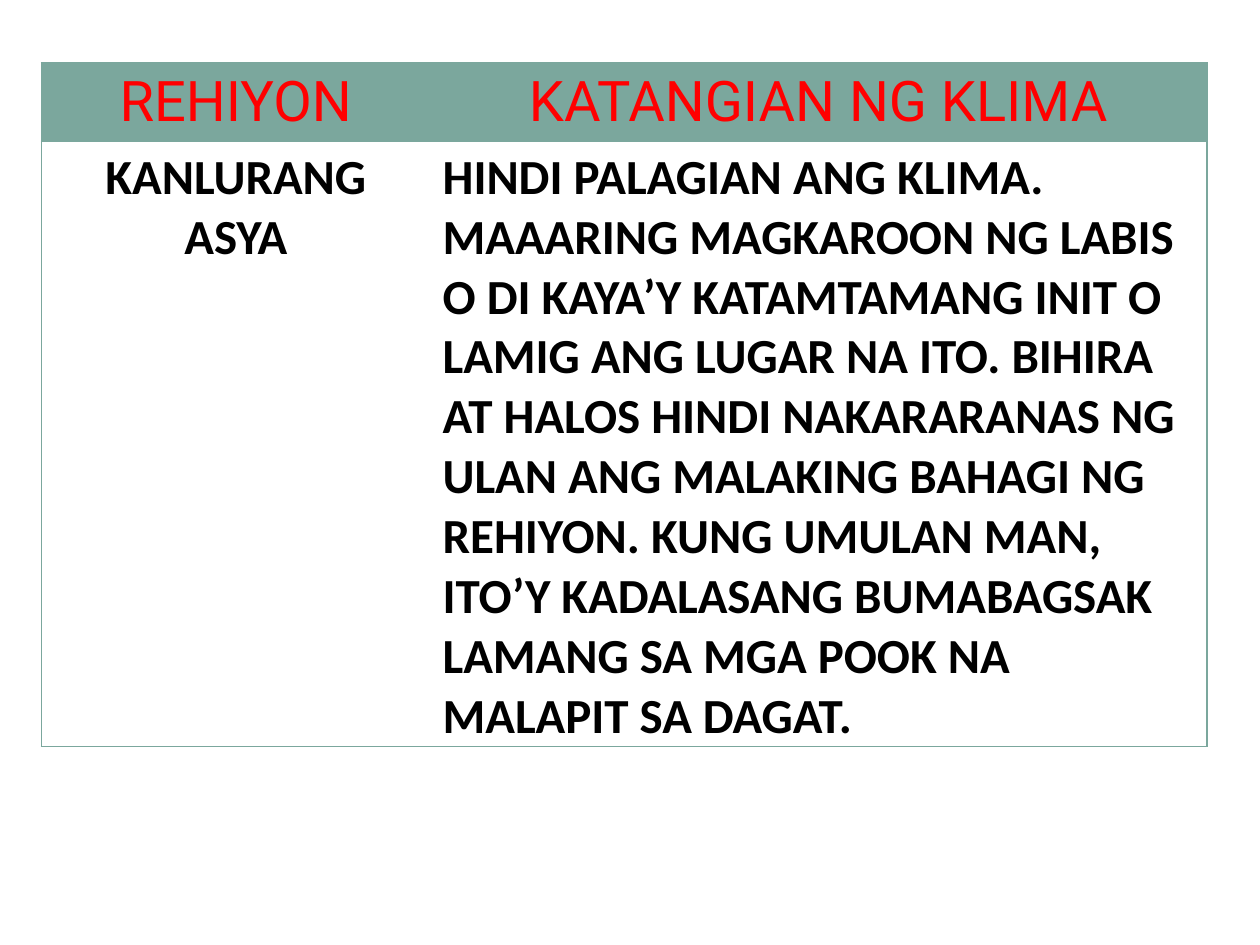
from dataclasses import dataclass

from lxml import etree
from pptx import Presentation
from pptx.dml.color import RGBColor
from pptx.enum.text import PP_ALIGN
from pptx.oxml.ns import qn
from pptx.util import Inches, Pt

CENTER, LEFT = PP_ALIGN.CENTER, PP_ALIGN.LEFT


@dataclass(frozen=True)
class Theme:
    green: str = "7BA79D"
    white: str = "FFFFFF"
    red: str = "FF0000"
    black: str = "000000"
    head_font: str = "Roboto"
    body_font: str = "Calibri"
    head_size: int = 32
    body_size: int = 28
    border: float = 0.79


THEME = Theme()

HEADERS = ("REHIYON", "KATANGIAN NG KLIMA")
CLIMATE = (
    "KANLURANG ASYA",
    "HINDI PALAGIAN ANG KLIMA. MAAARING MAGKAROON NG LABIS O DI KAYA’Y "
    "KATAMTAMANG INIT O LAMIG ANG LUGAR NA ITO. BIHIRA AT HALOS HINDI "
    "NAKARARANAS NG ULAN ANG MALAKING BAHAGI NG REHIYON. KUNG UMULAN MAN, "
    "ITO’Y KADALASANG BUMABAGSAK LAMANG SA MGA POOK NA MALAPIT SA DAGAT.",
)


def set_borders(cell, sides):
    """Draw the given sides (L, R, T, B) and hide the others."""
    tcPr = cell._tc.get_or_add_tcPr()
    for i, side in enumerate("LRTB"):
        ln = etree.Element(qn(f"a:ln{side}"), w=str(Pt(THEME.border)))
        if side in sides:
            fill = etree.SubElement(ln, qn("a:solidFill"))
            etree.SubElement(fill, qn("a:srgbClr"), val=THEME.green)
        else:
            etree.SubElement(ln, qn("a:noFill"))
        tcPr.insert(i, ln)


def fill_cell(cell, text, header, align):
    cell.fill.solid()
    cell.fill.fore_color.rgb = RGBColor.from_string(
        THEME.green if header else THEME.white)
    p = cell.text_frame.paragraphs[0]
    p.text = text
    p.alignment = align
    font = p.runs[0].font
    font.name = THEME.head_font if header else THEME.body_font
    font.size = Pt(THEME.head_size if header else THEME.body_size)
    font.bold = not header
    font.color.rgb = RGBColor.from_string(THEME.red if header else THEME.black)


def add_climate_table(slide, left, top, width, height):
    frame = slide.shapes.add_table(2, 2, left, top, width, height)
    table = frame.table

    # The second column is twice as wide; rows grow with their text
    table.columns[0].width = width // 3
    table.columns[1].width = width - width // 3
    for row in table.rows:
        row.height = Inches(0.41)
    frame.height = height

    for r, texts in enumerate((HEADERS, CLIMATE)):
        for c, text in enumerate(texts):
            cell = table.cell(r, c)
            fill_cell(cell, text, r == 0, LEFT if (r, c) == (1, 1) else CENTER)
            set_borders(cell, "T" + "LR"[c] + ("B" if r else ""))
            if r:
                cell.margin_bottom = 0


def main():
    prs = Presentation()
    prs.slide_width, prs.slide_height = Inches(10), Inches(7.5)
    slide = prs.slides.add_slide(prs.slide_layouts[6])
    add_climate_table(slide, Inches(0.33), Inches(0.5), Inches(9.25), Inches(5.87))
    prs.save("out.pptx")


if __name__ == "__main__":
    main()
